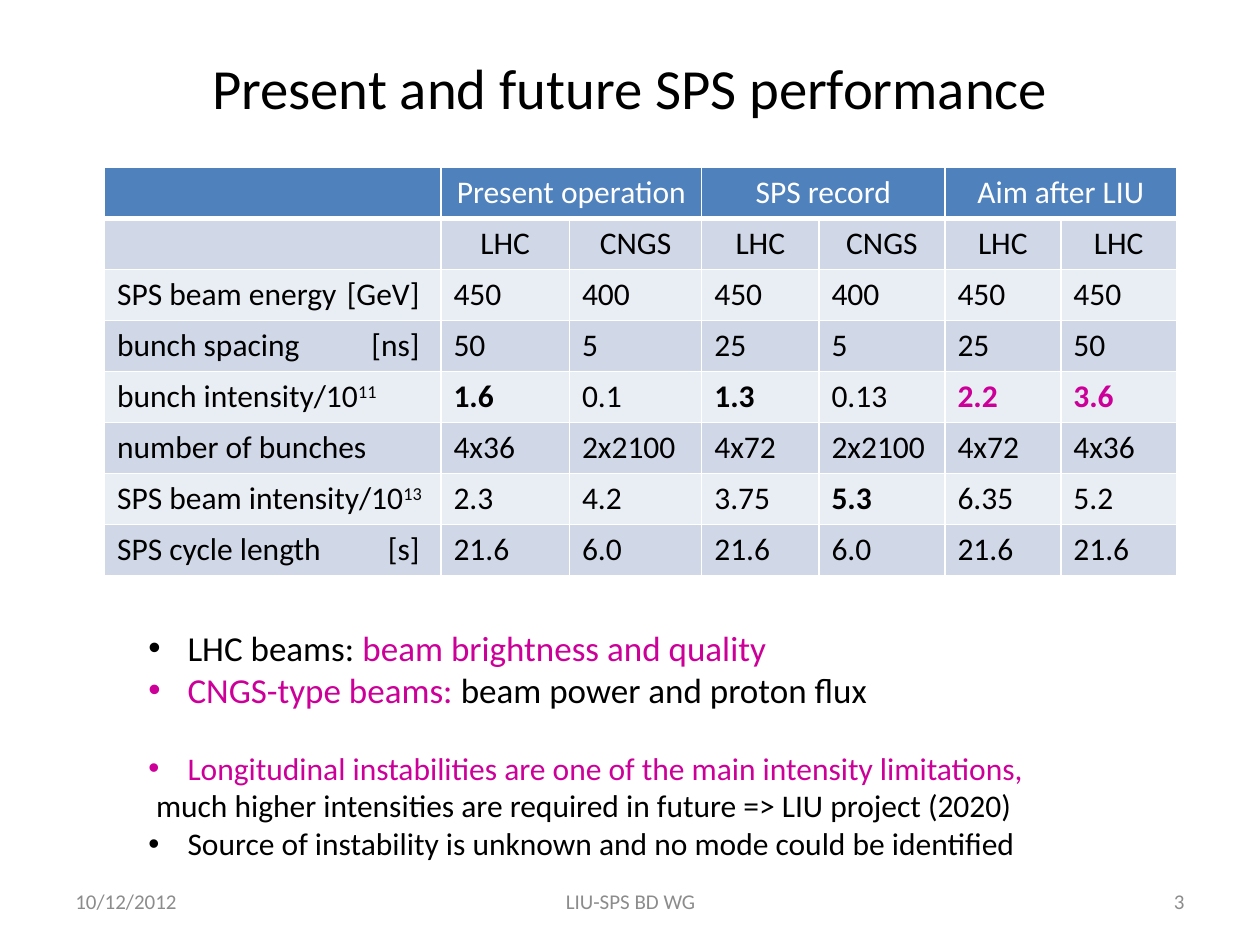
from lxml.etree import SubElement as Sub
from pptx import Presentation
from pptx.dml.color import RGBColor as RGB
from pptx.enum.text import MSO_ANCHOR as Anchor, PP_ALIGN as Align
from pptx.oxml.ns import qn
from pptx.util import Inches, Pt

BLACK = RGB(0, 0, 0)
WHITE = RGB(255, 255, 255)
PINK = RGB(0xCC, 0, 0x99)
GRAY = RGB(0x8C, 0x8C, 0x8C)
BLUE = RGB(0x4F, 0x81, 0xBD)
BANDS = [RGB(0xE9, 0xED, 0xF4), RGB(0xD0, 0xD8, 0xE8)]

WIDE, HIGH = 10, 7.5
TITLE = "Present and future SPS performance"
HEADS = ["Present operation", "SPS record", "Aim after LIU"]
ROWS = [
    ("", "", ["LHC", "CNGS", "LHC", "CNGS", "LHC", "LHC"]),
    ("SPS beam energy\t[GeV]", "", ["450", "400", "450", "400", "450", "450"]),
    ("bunch spacing\t[ns]", "", ["50", "5", "25", "5", "25", "50"]),
    ("bunch intensity/10", "11", ["1.6", "0.1", "1.3", "0.13", "2.2", "3.6"]),
    ("number of bunches", "", ["4x36", "2x2100", "4x72", "2x2100", "4x72", "4x36"]),
    ("SPS beam intensity/10", "13", ["2.3", "4.2", "3.75", "5.3", "6.35", "5.2"]),
    ("SPS cycle length\t[s]", "", ["21.6", "6.0", "21.6", "6.0", "21.6", "21.6"]),
]
BOLD = {"1.6", "1.3", "2.2", "3.6", "5.3"}
AIMS = {"2.2", "3.6"}
COLS = [2.67, 1.02, 1.05, 0.93, 1, 0.92, 0.92]
ROW = 0.405
TAB = 2.4

NOTES = [
    (20, 0, True, [("LHC beams: ", BLACK), ("beam brightness and quality", PINK)]),
    (20, 0, True, [("CNGS-type beams: ", PINK), ("beam power and proton flux", BLACK)]),
    (18, 22, True, [("Longitudinal instabilities are one of the main intensity limitations,", PINK)]),
    (18, 0, False, [("much higher intensities are required in future => LIU project (2020)", BLACK)]),
    (18, 0, True, [("Source of instability is unknown and no mode could be identified", BLACK)]),
]
FOOT = [
    ("10/12/2012", 0.5, 2.33, Align.LEFT),
    ("LIU-SPS BD WG", 3.42, 3.17, Align.CENTER),
    ("3", 7.17, 2.33, Align.RIGHT),
]


def add_run(para, text, size, color, bold=False, raised=False):
    run = para.add_run()
    run.text = text
    font = run.font
    font.name, font.size, font.bold = "Calibri", Pt(size), bold
    font.color.rgb = color
    if raised:
        run._r.get_or_add_rPr().set("baseline", "30000")


def add_box(slide, left, top, width, height, anchor=Anchor.MIDDLE):
    box = slide.shapes.add_textbox(*map(Inches, (left, top, width, height)))
    frame = box.text_frame
    frame.word_wrap = True
    frame.vertical_anchor = anchor
    return frame


def add_line(slide, text, size, color, align, *area):
    para = add_box(slide, *area).paragraphs[0]
    para.alignment = align
    add_run(para, text, size, color)


def paint(cell, color, base=1):
    props = cell._tc.get_or_add_tcPr()
    for side in "LRTB":
        width = Pt(base if side == "B" else 1)
        line = Sub(props, qn(f"a:ln{side}"), w=str(width))
        Sub(Sub(line, qn("a:solidFill")), qn("a:srgbClr"), val=str(WHITE))
    cell.fill.solid()
    cell.fill.fore_color.rgb = color


def add_grid(slide):
    count = len(ROWS) + 1
    area = map(Inches, (0.83, 1.33, sum(COLS), ROW * count))
    table = slide.shapes.add_table(count, len(COLS), *area).table
    for col, width in zip(table.columns, COLS):
        col.width = Inches(width)
    for row in table.rows:
        row.height = Inches(ROW)
    for col in range(len(COLS)):
        paint(table.cell(0, col), BLUE, 3)
    for num, head in enumerate(HEADS):
        cell = table.cell(0, 2 * num + 1)
        cell.merge(table.cell(0, 2 * num + 2))
        para = cell.text_frame.paragraphs[0]
        para.alignment = Align.CENTER
        add_run(para, head, 18, WHITE)
    for num, (label, power, values) in enumerate(ROWS, 1):
        for col, text in enumerate([label] + values):
            cell = table.cell(num, col)
            paint(cell, BANDS[num % 2])
            para = cell.text_frame.paragraphs[0]
            para.alignment = Align.CENTER if num == 1 else Align.LEFT
            if "\t" in text:
                tabs = Sub(para._p.get_or_add_pPr(), qn("a:tabLst"))
                Sub(tabs, qn("a:tab"), pos=str(Inches(TAB)), algn="r")
            if text:
                color = PINK if text in AIMS else BLACK
                add_run(para, text, 18, color, text in BOLD)
            if power and col == 0:
                add_run(para, power, 18, BLACK, raised=True)


def add_notes(slide):
    frame = add_box(slide, 1.08, 4.92, 8.25, 1.99, Anchor.TOP)
    for num, (size, gap, dot, parts) in enumerate(NOTES):
        para = frame.add_paragraph() if num else frame.paragraphs[0]
        para.space_before = Pt(gap)
        props = para._p.get_or_add_pPr()
        props.set("marL", str(Inches(0.31 if dot else 0.06)))
        if dot:
            props.set("indent", str(Inches(-0.31)))
            Sub(props, qn("a:buFont"), typeface="Arial")
            Sub(props, qn("a:buChar"), char="•")
        for text, color in parts:
            add_run(para, text, size, color)


def main():
    deck = Presentation()
    deck.slide_width, deck.slide_height = Inches(WIDE), Inches(HIGH)
    slide = deck.slides.add_slide(deck.slide_layouts[6])
    add_line(slide, TITLE, 32.4, BLACK, Align.CENTER, 0.5, 0.3, 9, 0.78)
    add_grid(slide)
    add_notes(slide)
    for text, left, width, align in FOOT:
        add_line(slide, text, 12, GRAY, align, left, 6.95, width, 0.4)
    deck.save("out.pptx")


if __name__ == "__main__":
    main()
